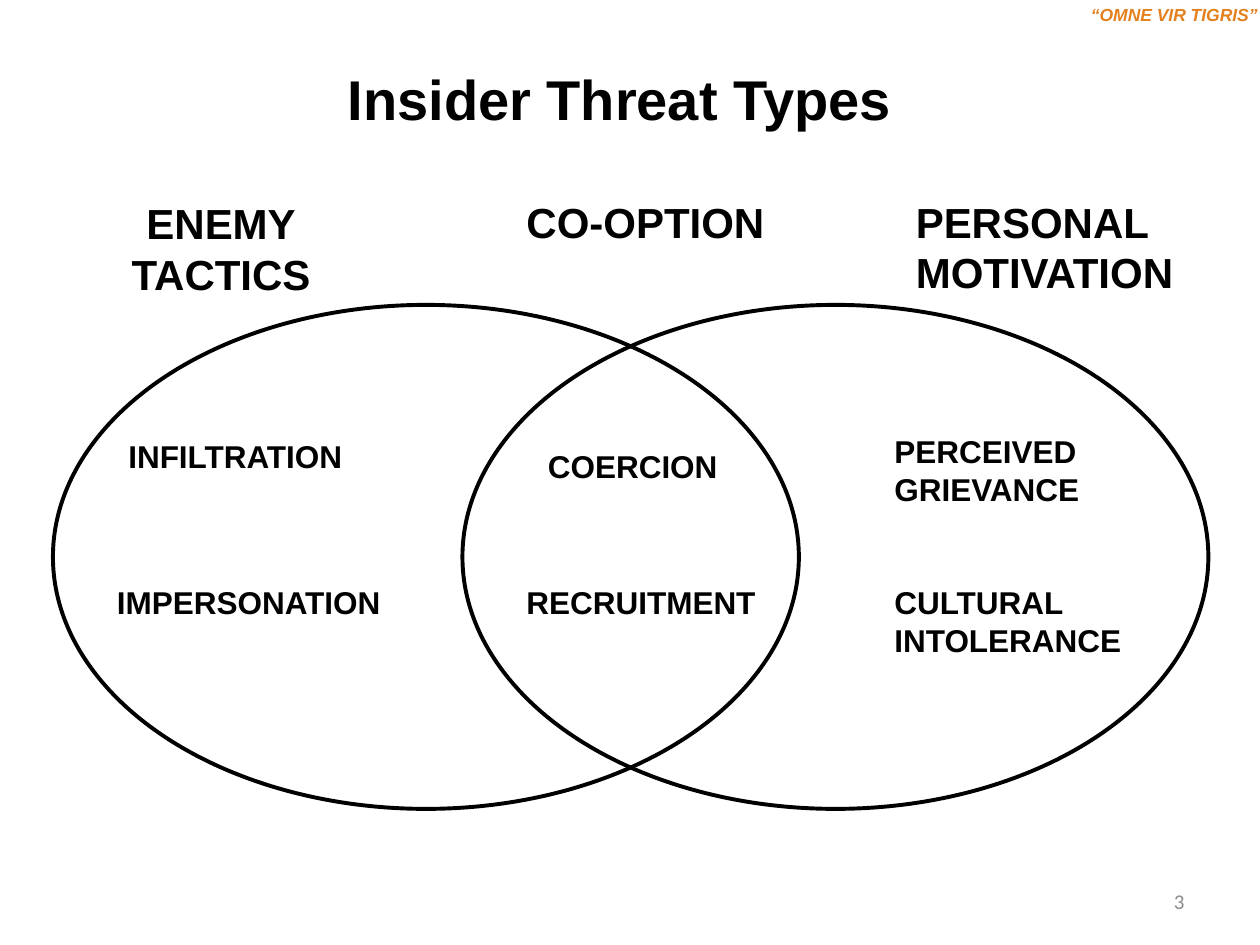
import pptx
import pptx.util
import pptx.dml.color
import pptx.enum.shapes
import pptx.enum.text

Inches = pptx.util.Inches
Pt = pptx.util.Pt
RGBColor = pptx.dml.color.RGBColor
ALIGN = pptx.enum.text.PP_ALIGN
ANCHOR = pptx.enum.text.MSO_ANCHOR

BLACK = RGBColor(0x00, 0x00, 0x00)
ORANGE = RGBColor(0xE4, 0x81, 0x1E)
GRAY = RGBColor(0x8C, 0x8C, 0x8C)

HEADING_SIZE = 24
LABEL_SIZE = 18


class VennSlide:
    """Holds the text style and the slide being drawn."""

    font_name = "Arial"

    def __init__(self, presentation):
        self.slide = presentation.slides.add_slide(presentation.slide_layouts[5])

    def add_lines(self, frame, lines, size, color=BLACK, bold=True, italic=False,
                  align=ALIGN.LEFT, font_name=font_name):
        for index, line in enumerate(lines):
            paragraph = frame.add_paragraph() if index else frame.paragraphs[0]
            paragraph.alignment = align
            run = paragraph.add_run()
            run.text = line
            run.font.name = font_name
            run.font.size = Pt(size)
            run.font.bold = bold
            run.font.italic = italic
            run.font.color.rgb = color

    def title(self, text, left, top, width, height):
        shape = self.slide.shapes.title
        shape.left, shape.top = Inches(left), Inches(top)
        shape.width, shape.height = Inches(width), Inches(height)
        frame = shape.text_frame
        frame.vertical_anchor = ANCHOR.TOP
        frame.margin_top = Inches(0.09)
        self.add_lines(frame, [text], 32, align=ALIGN.CENTER)

    def text(self, lines, left, top, width, height, size, wrap=True,
             anchor=ANCHOR.TOP, **style):
        box = self.slide.shapes.add_textbox(
            Inches(left), Inches(top), Inches(width), Inches(height))
        frame = box.text_frame
        frame.word_wrap = wrap
        frame.vertical_anchor = anchor
        self.add_lines(frame, lines, size, **style)

    def ellipse(self, left, top, width, height):
        shape = self.slide.shapes.add_shape(
            pptx.enum.shapes.MSO_SHAPE.OVAL,
            Inches(left), Inches(top), Inches(width), Inches(height))
        shape.shadow.inherit = False
        shape.fill.background()
        shape.line.color.rgb = BLACK
        shape.line.width = Pt(2.25)


def main():
    presentation = pptx.Presentation()
    presentation.slide_width = Inches(10)
    presentation.slide_height = Inches(7.5)
    venn = VennSlide(presentation)

    # Motto, title and slide number
    venn.text(["“OMNE VIR TIGRIS”"], 8.55, -0.02, 1.54, 0.27, 10, wrap=False,
              color=ORANGE, italic=True, align=ALIGN.CENTER)
    venn.title("Insider Threat Types", 0.42, 0.42, 9, 0.75)
    venn.text(["3"], 7.17, 6.95, 2.33, 0.4, 12, anchor=ANCHOR.MIDDLE,
              color=GRAY, bold=False, align=ALIGN.RIGHT, font_name="Calibri")

    # Overlapping ellipses
    for left in (0.42, 3.67):
        venn.ellipse(left, 2.42, 5.92, 4)

    # Headings
    venn.text(["ENEMY", "TACTICS"], 0.92, 1.52, 1.67, 0.91, HEADING_SIZE,
              align=ALIGN.CENTER)
    venn.text(["CO-OPTION"], 4.08, 1.51, 2.25, 0.5, HEADING_SIZE)
    venn.text(["PERSONAL MOTIVATION"], 7.17, 1.51, 2.33, 0.91, HEADING_SIZE)

    # Threat types inside the ellipses
    labels = [
        ("INFILTRATION", 0.92, 3.42, 2.67, 0.4, True),
        ("IMPERSONATION", 0.83, 4.58, 2.67, 0.4, True),
        ("COERCION", 4.25, 3.5, 1.56, 0.4, False),
        ("RECRUITMENT", 4.08, 4.58, 2.04, 0.4, False),
        ("PERCEIVED GRIEVANCE", 7, 3.38, 2.67, 0.71, True),
        ("CULTURAL INTOLERANCE", 7, 4.58, 2.92, 0.71, True),
    ]
    for text, left, top, width, height, wrap in labels:
        venn.text([text], left, top, width, height, LABEL_SIZE, wrap=wrap)

    presentation.save("out.pptx")


if __name__ == "__main__":
    main()
